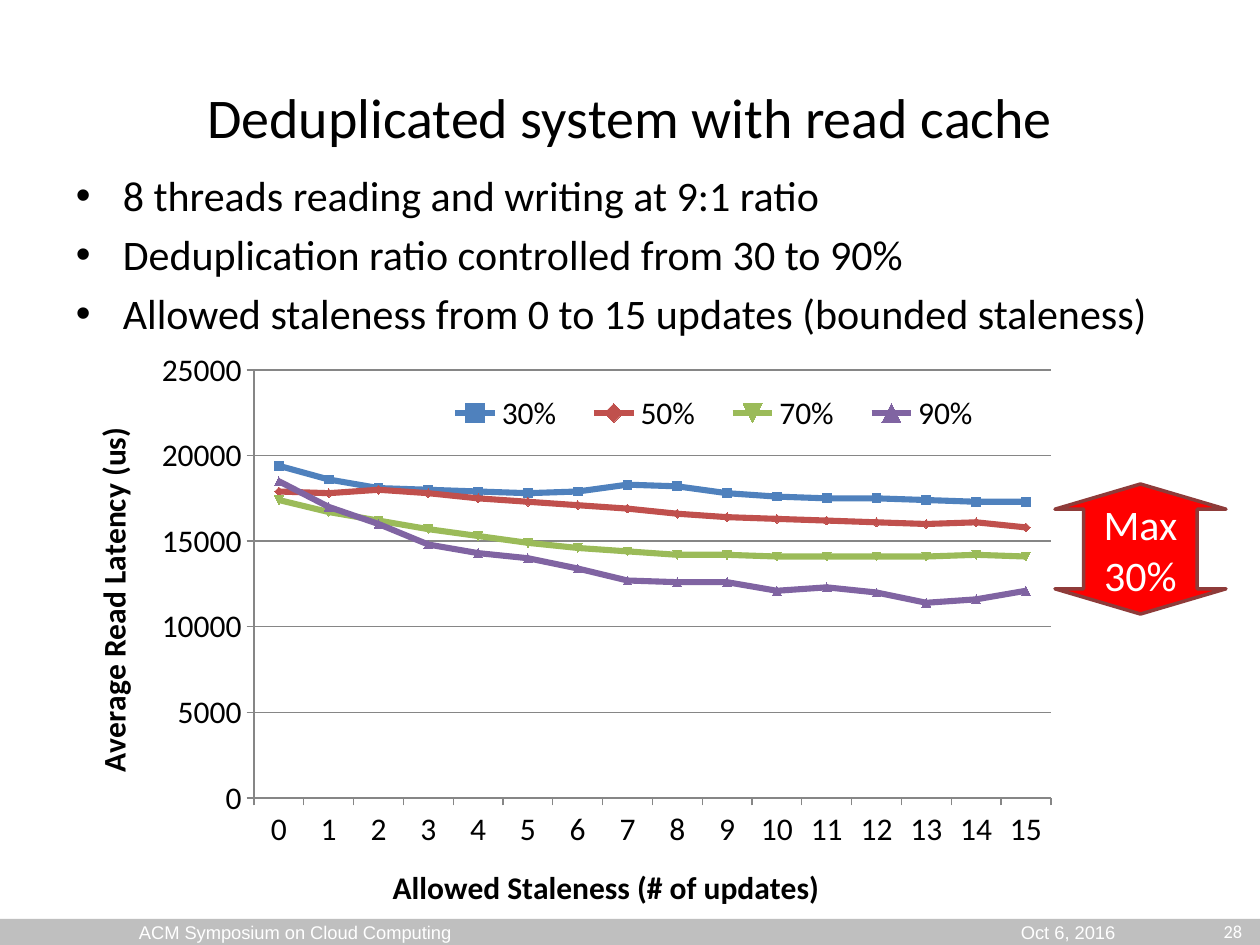
from dataclasses import dataclass

from lxml import etree
from pptx import Presentation
from pptx.chart.data import CategoryChartData
from pptx.dml.color import RGBColor
from pptx.enum.chart import XL_CHART_TYPE, XL_LEGEND_POSITION, XL_TICK_MARK
from pptx.enum.shapes import MSO_SHAPE
from pptx.enum.text import MSO_ANCHOR, PP_ALIGN
from pptx.oxml import parse_xml
from pptx.oxml.ns import nsdecls, qn
from pptx.util import Emu, Pt

PX = 914400 // 126
LEFT, CENTER, RIGHT = PP_ALIGN.LEFT, PP_ALIGN.CENTER, PP_ALIGN.RIGHT
TOP, MIDDLE = MSO_ANCHOR.TOP, MSO_ANCHOR.MIDDLE
BLACK, WHITE, GRID = "000000", "FFFFFF", "868686"


@dataclass(frozen=True)
class Box:
    left: int
    top: int
    width: int
    height: int

    def emu(self) -> list[Emu]:
        return [px(v) for v in (self.left, self.top, self.width, self.height)]


@dataclass(frozen=True)
class Series:
    name: str
    color: str
    hundreds: tuple[int, ...]  # latency in units of 100 us


CHART = Box(63, 340, 1008, 598)
PLOT = Box(254, 370, 797, 428)
LEGEND = Box(428, 392, 572, 42)
SERIES = (
    Series("30%", "4F81BD", (194, 186, 181, 180, 179, 178, 179, 183,
                             182, 178, 176, 175, 175, 174, 173, 173)),
    Series("50%", "C0504D", (179, 178, 180, 178, 175, 173, 171, 169,
                             166, 164, 163, 162, 161, 160, 161, 158)),
    Series("70%", "9BBB59", (174, 167, 162, 157, 153, 149, 146, 144,
                             142, 142, 141, 141, 141, 141, 142, 141)),
    Series("90%", "8064A2", (185, 170, 160, 148, 143, 140, 134, 127,
                             126, 126, 121, 123, 120, 114, 116, 121)),
)
BULLETS = (
    "8 threads reading and writing at 9:1 ratio",
    "Deduplication ratio controlled from 30 to 90%",
    "Allowed staleness from 0 to 15 updates (bounded staleness)",
)


def px(value: int) -> Emu:
    return Emu(value * PX)


def rgb(value: str) -> RGBColor:
    return RGBColor.from_string(value)


def style_font(font, size: float, color: str, name: str = "Calibri", bold: bool = False) -> None:
    font.size, font.name, font.bold = Pt(size), name, bold
    font.color.rgb = rgb(color)


def write(frame, *lines: str, size: float, color: str = BLACK, font: str = "Calibri",
          align=LEFT, anchor=MIDDLE, insets: tuple[int, int] = (13, 6)) -> None:
    """Fill a text frame with one paragraph per line."""
    frame.word_wrap = True
    frame.vertical_anchor = anchor
    frame.margin_left = frame.margin_right = px(insets[0])
    frame.margin_top = frame.margin_bottom = px(insets[1])
    for i, line in enumerate(lines):
        paragraph = frame.paragraphs[0] if i == 0 else frame.add_paragraph()
        paragraph.alignment = align
        run = paragraph.add_run()
        run.text = line
        style_font(run.font, size, color, font)


def add_block(slide, kind, box: Box, fill: str):
    block = slide.shapes.add_shape(kind, *box.emu())
    block.shadow.inherit = False
    block.fill.solid()
    block.fill.fore_color.rgb = rgb(fill)
    block.line.fill.background()
    return block


def set_guides(block, **guides: int) -> None:
    """Write the adjust values of a preset shape under their exact names."""
    geometry = block._element.spPr.find(qn("a:prstGeom"))
    for old in list(geometry):
        geometry.remove(old)
    values = etree.SubElement(geometry, qn("a:avLst"))
    for name, value in guides.items():
        etree.SubElement(values, qn("a:gd"), name=name, fmla=f"val {value}")


def add_bullets(frame, indent: int) -> None:
    for paragraph in frame.paragraphs:
        props = paragraph._p.get_or_add_pPr()
        props.set("marL", str(px(indent)))
        props.set("indent", str(-px(indent)))
        props.append(parse_xml(f'<a:spcBef {nsdecls("a")}><a:spcPct val="20000"/></a:spcBef>'))
        props.append(parse_xml(f'<a:buFont {nsdecls("a")} typeface="Arial"/>'))
        props.append(parse_xml(f'<a:buChar {nsdecls("a")} char="•"/>'))


def place(element, before: tuple[str, ...], box: Box, sized: bool = True, inner: bool = False) -> None:
    """Give a chart part a fixed place, as fractions of the chart."""
    for old in element.findall(qn("c:layout")):
        element.remove(old)
    layout = etree.Element(qn("c:layout"))
    manual = etree.SubElement(layout, qn("c:manualLayout"))
    values = [("layoutTarget", "inner")] if inner else []
    values += [("xMode", "edge"), ("yMode", "edge"),
               ("x", (box.left - CHART.left) / CHART.width),
               ("y", (box.top - CHART.top) / CHART.height)]
    if sized:
        values += [("w", box.width / CHART.width), ("h", box.height / CHART.height)]
    for tag, value in values:
        etree.SubElement(manual, qn(f"c:{tag}")).set("val", str(value))
    position = next((i + 1 for i, child in reversed(list(enumerate(element)))
                     if child.tag in [qn(tag) for tag in before]), 0)
    element.insert(position, layout)


def style_axis(axis, title: str, box: Box) -> None:
    axis.major_tick_mark = XL_TICK_MARK.OUTSIDE
    axis.minor_tick_mark = XL_TICK_MARK.NONE
    axis.format.line.color.rgb = rgb(GRID)
    style_font(axis.tick_labels.font, 18, BLACK)
    axis.axis_title.text_frame.text = title
    run = axis.axis_title.text_frame.paragraphs[0].runs[0]
    style_font(run.font, 18, BLACK, bold=True)
    place(axis.axis_title._element, ("c:tx",), box, sized=False)


def add_latency_chart(slide) -> None:
    data = CategoryChartData()
    data.categories = [str(n) for n in range(16)]
    for series in SERIES:
        data.add_series(series.name, [v * 100 for v in series.hundreds])
    chart = slide.shapes.add_chart(XL_CHART_TYPE.LINE_MARKERS, *CHART.emu(), data).chart
    chart.has_title = False
    style_font(chart.font, 18, BLACK)
    chart.plots[0].vary_by_categories = False
    for line, series in zip(chart.plots[0].series, SERIES):
        line.smooth = False
        line.format.line.width = Pt(3.5)
        line.marker.size = 5
        line.marker.format.fill.solid()
        line.marker.format.fill.fore_color.rgb = rgb(series.color)
        for outline in (line.format.line, line.marker.format.line):
            outline.color.rgb = rgb(series.color)

    # Axes
    latency = chart.value_axis
    latency.minimum_scale, latency.maximum_scale, latency.major_unit = 0, 25000, 5000
    latency.has_major_gridlines = True
    latency.major_gridlines.format.line.color.rgb = rgb(GRID)
    style_axis(latency, "Average Read Latency (us)", Box(86, 422, 34, 345))
    style_axis(chart.category_axis, "Allowed Staleness (# of updates)", Box(387, 860, 426, 38))

    # Legend over the plot
    chart.has_legend = True
    chart.legend.position = XL_LEGEND_POSITION.RIGHT
    chart.legend.include_in_layout = True
    style_font(chart.legend.font, 18, BLACK)
    place(chart.legend._element, ("c:legendPos",), LEGEND)
    place(chart._chartSpace.chart.plotArea, (), PLOT, inner=True)


def main() -> None:
    prs = Presentation()
    prs.slide_width, prs.slide_height = px(1260), px(945)
    slide = prs.slides.add_slide(prs.slide_layouts[5])

    # Footer bar: event at the left, date at a tab stop
    footer = add_block(slide, MSO_SHAPE.RECTANGLE, Box(0, 919, 1260, 26), "BFBFBF")
    write(footer.text_frame, "ACM Symposium on Cloud Computing\tOct 6, 2016",
          size=10.5, color=WHITE, font="Arial", insets=(139, 0))
    footer.text_frame.paragraphs[0]._p.get_or_add_pPr().append(parse_xml(
        f'<a:tabLst {nsdecls("a")}><a:tab pos="{px(882)}" algn="l"/></a:tabLst>'))

    # Title and bullets
    title = slide.shapes.title
    title.left, title.top, title.width, title.height = Box(63, 37, 1134, 158).emu()
    write(title.text_frame, "Deduplicated system with read cache", size=32, align=CENTER)
    body = slide.shapes.add_textbox(*Box(63, 164, 1134, 670).emu()).text_frame
    write(body, *BULLETS, size=24, anchor=TOP)
    add_bullets(body, 47)

    add_latency_chart(slide)

    # Spread between the best and worst line
    spread = add_block(slide, MSO_SHAPE.UP_DOWN_ARROW, Box(1055, 484, 171, 130), "FF0000")
    set_guides(spread, adj1=66400, adj2=19400)
    spread.line.color.rgb = rgb("8E3B39")
    spread.line.width = Pt(2)
    write(spread.text_frame, "Max", "30%", size=24, color=WHITE, align=CENTER, insets=(0, 0))

    # Page number
    page = slide.shapes.add_textbox(*Box(961, 906, 294, 50).emu())
    write(page.text_frame, "28", size=10.5, color=WHITE, align=RIGHT)

    prs.save("out.pptx")


if __name__ == "__main__":
    main()
